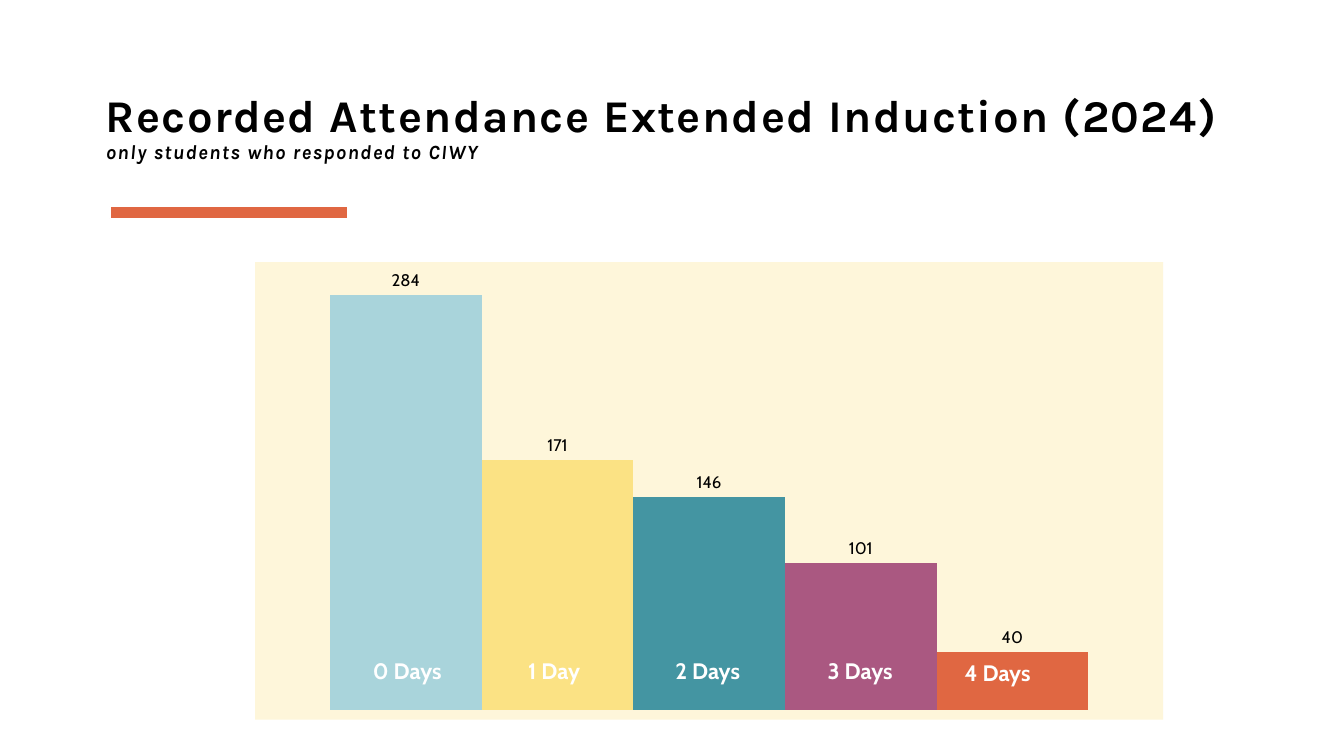
from lxml import etree
from pptx import Presentation
from pptx.chart.data import CategoryChartData
from pptx.dml.color import RGBColor
from pptx.enum import chart as ch, shapes, text
from pptx.oxml import parse_xml
from pptx.oxml.ns import nsdecls, qn
from pptx.util import Pt

COLORS = {
    "black": "000000", "white": "FFFFFF", "cream": "FEF6DA",
    "sky": "A9D4DB", "yellow": "FBE284", "teal": "4495A2",
    "plum": "AA5881", "orange": "E06742",
}

# Students, bar colour, label text, label left, top and width
DAYS = [
    (284, "sky", "0 Days", 257, 464.4, 95),
    (171, "yellow", "1 Day", 367.9, 464.4, 70.6),
    (146, "teal", "2 Days", 473, 464.4, 85.7),
    (101, "plum", "3 Days", 581.8, 464.4, 77),
    (40, "orange", "4 Days", 679.7, 465.8, 70.6),
]


def rgb(name):
    return RGBColor.from_string(COLORS[name])


def style_font(font, name, size, color, bold=False, italic=False):
    font.name, font.size = name, Pt(size)
    font.bold, font.italic = bold, italic
    font.color.rgb = rgb(color)


def set_margins(tf, x, y):
    tf.margin_left = tf.margin_right = Pt(x)
    tf.margin_top = tf.margin_bottom = Pt(y)


def add_title(s, title, subtitle):
    sp = s.shapes.title
    sp.left, sp.top, sp.width, sp.height = Pt(75.6), Pt(69.1), Pt(857.5), Pt(48.2)
    tf = sp.text_frame
    set_margins(tf, 0, 0)
    tf.word_wrap = True
    tf.auto_size = text.MSO_AUTO_SIZE.NONE
    tf.vertical_anchor = text.MSO_ANCHOR.BOTTOM
    p = tf.paragraphs[0]
    p.text = f"{title}\v{subtitle}"
    p.alignment = text.PP_ALIGN.LEFT
    p.line_spacing = 0.9
    for r, size, italic in zip(p.runs, (32.4, 14.4), (False, True)):
        style_font(r.font, "Karla", size, "black", True, italic)
        r.font._element.set("spc", "100")


def add_accent_bar(s):
    sp = s.shapes.add_shape(shapes.MSO_SHAPE.RECTANGLE,
                            Pt(78.5), Pt(147.6), Pt(170), Pt(8.6))
    sp.shadow.inherit = False
    sp.fill.solid()
    sp.fill.fore_color.rgb = rgb("orange")
    sp.line.color.rgb = rgb("white")
    sp.line.width = Pt(1)


def fill_chart_area(chart, color):
    sp_pr = parse_xml(
        f'<c:spPr {nsdecls("c", "a")}><a:solidFill><a:srgbClr val="{COLORS[color]}"/>'
        "</a:solidFill><a:ln><a:noFill/></a:ln></c:spPr>")
    chart._chartSpace.find(qn("c:chart")).addnext(sp_pr)


def set_plot_layout(chart, margin):
    """Inset the plot by the same share of the chart on every side."""
    plot_area = chart._chartSpace.find(qn("c:chart")).find(qn("c:plotArea"))
    for old in plot_area.findall(qn("c:layout")):
        plot_area.remove(old)
    layout = etree.Element(qn("c:layout"))
    manual = etree.SubElement(layout, qn("c:manualLayout"))
    size = 1 - 2 * margin
    for tag, val in (("layoutTarget", "inner"), ("xMode", "edge"), ("yMode", "edge"),
                     ("x", margin), ("y", margin), ("w", size), ("h", size)):
        etree.SubElement(manual, qn(f"c:{tag}")).set("val", str(val))
    plot_area.insert(0, layout)


def add_attendance_chart(s):
    data = CategoryChartData()
    data.categories = ["1"]
    for i, day in enumerate(DAYS, 1):
        data.add_series(f"Series {i}", [day[0]])
    chart = s.shapes.add_chart(ch.XL_CHART_TYPE.COLUMN_CLUSTERED, Pt(182.2), Pt(187.2),
                               Pt(648.7), Pt(326.9), data).chart
    chart.has_legend = chart.has_title = False
    style_font(chart.font, "Cabin", 10, "black")
    fill_chart_area(chart, "cream")
    set_plot_layout(chart, 0.02)

    # Hidden axes
    axis = chart.value_axis
    axis.minimum_scale, axis.maximum_scale = 0, 300
    axis.has_major_gridlines = False
    axis.visible = chart.category_axis.visible = False

    # Columns and their values
    plot = chart.plots[0]
    plot.gap_width, plot.overlap = 75, 0
    plot.vary_by_categories = False
    for series, day in zip(plot.series, DAYS):
        series.format.fill.solid()
        series.format.fill.fore_color.rgb = rgb(day[1])
        labels = series.data_labels
        labels.show_value = True
        labels.position = ch.XL_LABEL_POSITION.OUTSIDE_END
        style_font(labels.font, "Cabin", 12, "black")


def add_day_label(s, label, left, top, width):
    tf = s.shapes.add_textbox(Pt(left), Pt(top), Pt(width), Pt(28.8)).text_frame
    set_margins(tf, 9.4, 5)
    tf.word_wrap = True
    tf.auto_size = text.MSO_AUTO_SIZE.SHAPE_TO_FIT_TEXT
    tf.text = label
    style_font(tf.paragraphs[0].runs[0].font, "Cabin", 16, "white", True)


def main():
    prs = Presentation()
    prs.slide_width, prs.slide_height = Pt(960), Pt(540)
    s = prs.slides.add_slide(prs.slide_layouts[5])

    # Heading
    add_title(s, "Recorded Attendance Extended Induction (2024) ",
              "only students who responded to CIWY")
    add_accent_bar(s)

    # Chart with a day label on each column
    add_attendance_chart(s)
    for day in DAYS:
        add_day_label(s, *day[2:])

    prs.save("out.pptx")


if __name__ == "__main__":
    main()
